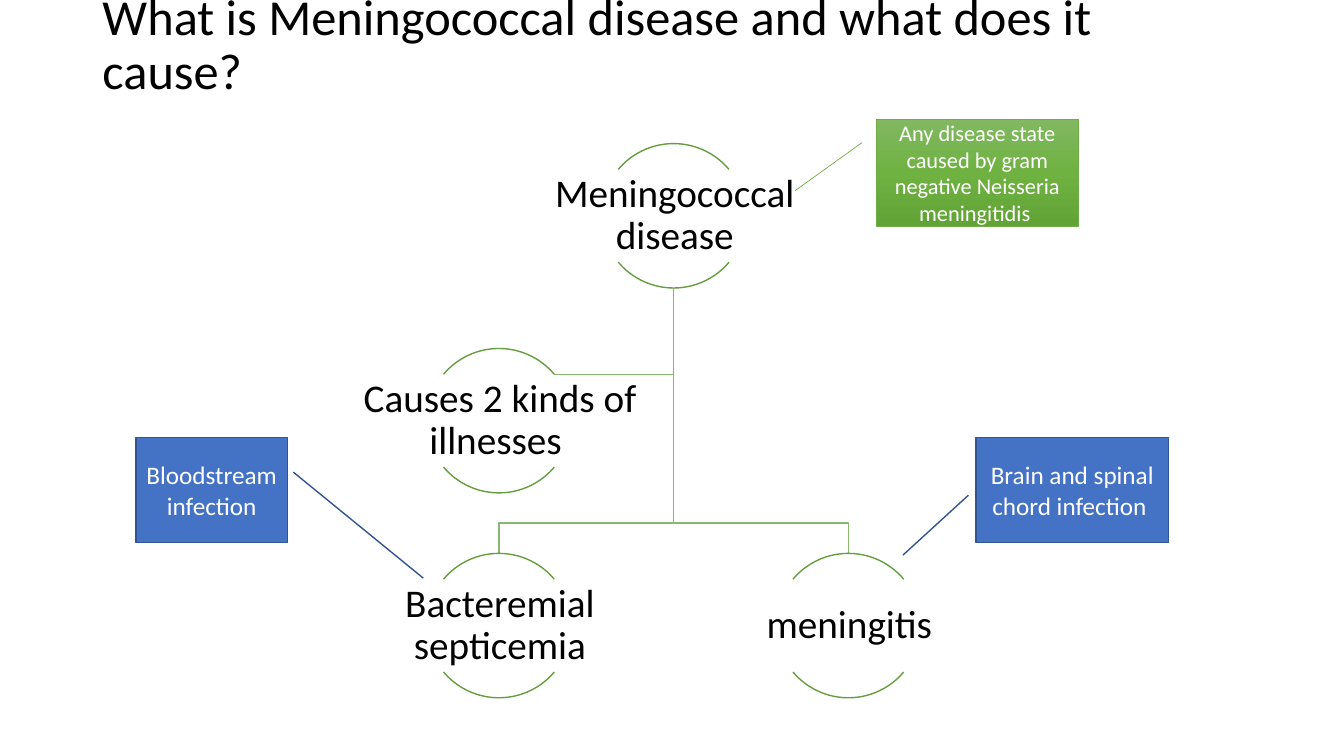
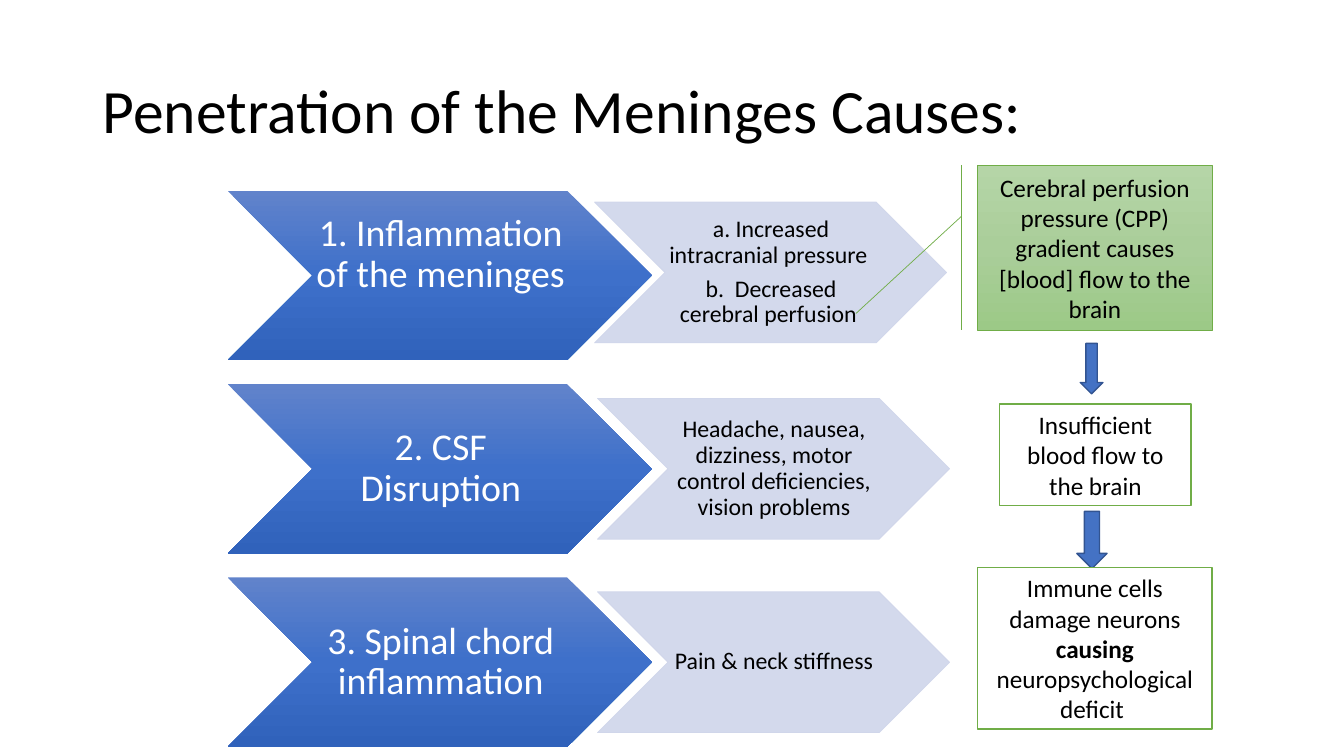
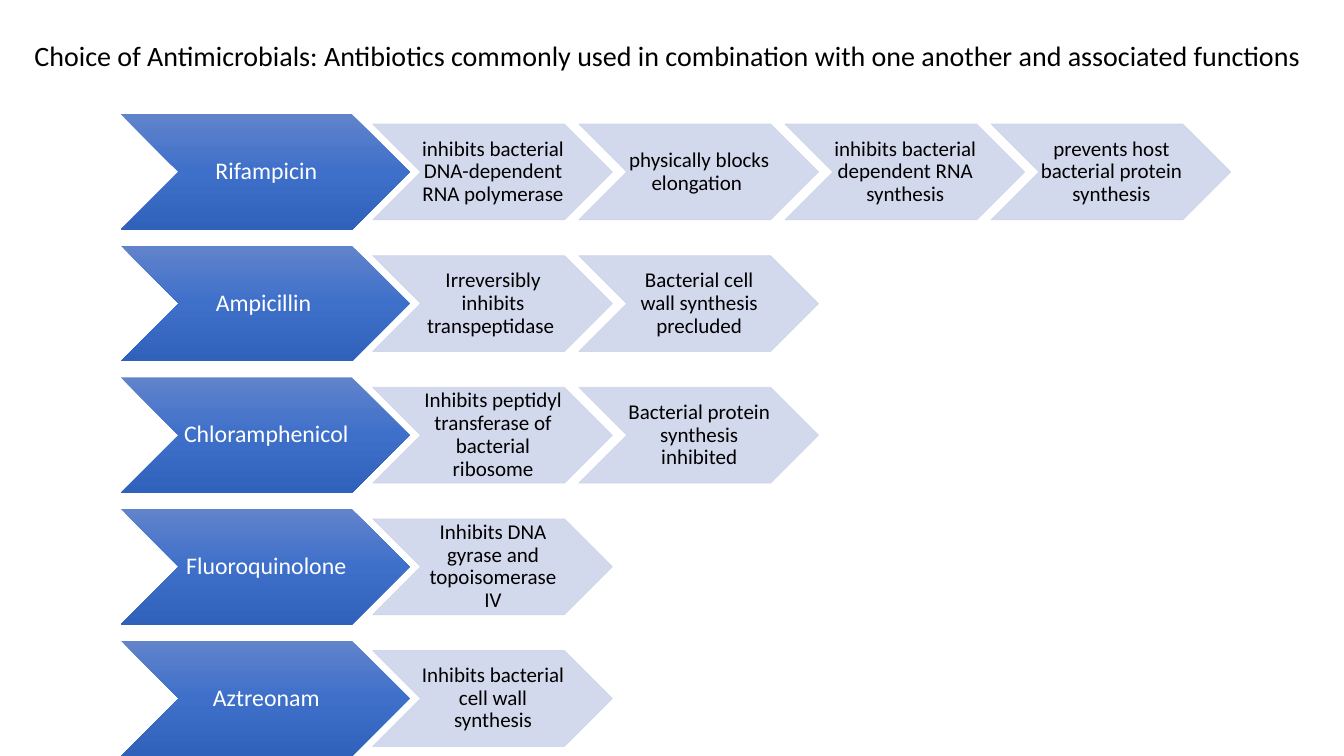
"""Build three slides on meningococcal disease: causes, effects and antimicrobials."""
from copy import deepcopy

from lxml.etree import SubElement
from pptx import Presentation
from pptx.dml.color import RGBColor
from pptx.enum.shapes import MSO_SHAPE
from pptx.enum.text import MSO_ANCHOR, MSO_AUTO_SIZE, PP_ALIGN
from pptx.oxml.ns import qn
from pptx.util import Inches, Pt

FONT = "Calibri"
COLOURS = {
    "black": "000000", "white": "FFFFFF", "blue": "4472C4", "navy": "325491",
    "green": "70AD47", "arc": "669D40", "branch": "88B76F", "pale": "CFD5EA",
}
GRADIENTS = {
    "blue fade": ("6183CB", "3E70CA", "3062BB"),
    "green fade": ("81B861", "6FB242", "62A336"),
    "light green fade": ("B5D5A7", "AACE9A", "9CC987"),
}

deck = Presentation()
deck.slide_width, deck.slide_height = Inches(13.33), Inches(7.5)
CELL = deck.slide_width / 160


def paint(shape, fill=None, line=None, width=1, adjustments=()):
    """Set the fill, outline and adjustments of a shape."""
    shape.shadow.inherit = False
    for index, value in enumerate(adjustments):
        shape.adjustments[index] = value
    if fill in GRADIENTS:
        shape.fill.gradient()
        shape.fill.gradient_angle = 270
        stop_list = shape._element.spPr.find(qn("a:gradFill")).find(qn("a:gsLst"))
        stop_list.insert(1, deepcopy(stop_list[0]))
        for index, stop in enumerate(shape.fill.gradient_stops):
            stop.position = index / 2
            stop.color.rgb = RGBColor.from_string(GRADIENTS[fill][index])
    elif fill:
        shape.fill.solid()
        shape.fill.fore_color.rgb = RGBColor.from_string(COLOURS[fill])
    else:
        shape.fill.background()
    if line:
        shape.line.color.rgb = RGBColor.from_string(COLOURS[line])
        shape.line.width = Pt(width)
    else:
        shape.line.fill.background()
    if fill == "pale":
        for colour in shape._element.spPr.iter(qn("a:srgbClr")):
            SubElement(colour, qn("a:alpha"), val="90000")


def write(shape, text, size, colour="black", inset=None, align=PP_ALIGN.CENTER, spacing=0.9, after=0.35):
    """Fill a shape with paragraphs, one per line, with **bold** spans."""
    frame = shape.text_frame
    frame.word_wrap = True
    frame.auto_size = MSO_AUTO_SIZE.NONE
    frame.vertical_anchor = MSO_ANCHOR.MIDDLE
    if inset is not None:
        frame.margin_left = frame.margin_top = frame.margin_bottom = Inches(inset)
        frame.margin_right = 0
    frame.text = text
    for para in frame.paragraphs:
        parts = para.text.split("**")
        para.text = parts[0]
        for part in parts[1:]:
            para.add_run().text = part
        para.alignment, para.line_spacing = align, spacing
        para.space_before, para.space_after = 0, Pt(after * size)
        for index, span in enumerate(para.runs):
            span.font.name, span.font.size = FONT, Pt(size)
            span.font.bold = index % 2 == 1
            span.font.color.rgb = RGBColor.from_string(COLOURS[colour])


titles = [
    ("What is Meningococcal disease and what does it cause?", 36, (11, -3.2, 138, 17.4)),
    ("Penetration of the Meninges Causes:", 44, (11, 4.8, 138, 17.4)),
    ("Choice of Antimicrobials: Antibiotics commonly used in combination with one another "
     "and associated functions", 20, (2.9, 0, 161.8, 13.6)),
]
pages = []
for text, size, area in titles:
    page = deck.slides.add_slide(deck.slide_layouts[5])
    title = page.shapes.title
    title.left, title.top, title.width, title.height = [round(CELL * n) for n in area]
    write(title, text, size, align=PP_ALIGN.LEFT, after=0)
    pages.append(page)
disease_page, effects_page, drugs_page = pages

diameter, middle, side, first_row, level = 17.2, 80.2, 20.8, 17.1, 24.4
root_bottom = first_row + diameter
leaf_top = first_row + 2 * level
fork = leaf_top - 3.6
assistant_row = first_row + level + 3.1
branches = [
    [(middle, root_bottom), (middle, assistant_row), (middle - side + 6.6, assistant_row)],
    [(middle, root_bottom), (middle, fork), (middle + side, fork), (middle + side, leaf_top)],
    [(middle, root_bottom), (middle, fork), (middle - side, fork), (middle - side, leaf_top)],
]
for branch in branches:
    points = [(round(CELL * x), round(CELL * y)) for x, y in branch]
    outline = disease_page.shapes.build_freeform(*points[0])
    outline.add_line_segments(points[1:], close=False)
    paint(outline.convert_to_shape(), line="branch")

nodes = [
    ("Meningococcal disease", 0, 0),
    ("Bacteremial septicemia", -1, 2),
    ("meningitis", 1, 2),
    ("Causes 2 kinds of illnesses ", -1, 1),
]
for text, column, row in nodes:
    centre, top = middle + column * side, first_row + row * level
    circle = [round(CELL * n) for n in (centre - diameter / 2, top, diameter, diameter)]
    for angles in ((132, 192), (24, 84)):
        paint(disease_page.shapes.add_shape(MSO_SHAPE.ARC, *circle), line="arc", adjustments=angles)
    area = (centre - diameter, top + 3.1, 2 * diameter, 11)
    label = disease_page.shapes.add_textbox(*[round(CELL * n) for n in area])
    write(label, text, 28, inset=0.02)

flows = [
    (effects_page, 27.1, 22.7, 20.2, 27, 17, [
        ("1. Inflammation of the meninges \t",
         ["a. Increased intracranial pressure \nb.  Decreased cerebral perfusion "], 0.35),
        ("2. CSF Disruption",
         ["Headache, nausea, dizziness, motor control deficiencies, vision problems"], 0),
        ("3. Spinal chord inflammation", ["Pain & neck stiffness"], 0),
    ]),
    (drugs_page, 14.4, 13.6, 13.75, 17, 15, [
        ("Rifampicin",
         ["inhibits bacterial DNA-dependent RNA polymerase", "physically blocks elongation ",
          "inhibits bacterial dependent RNA synthesis",
          "prevents host bacterial protein synthesis"], 0),
        ("Ampicillin ",
         ["Irreversibly inhibits transpeptidase ", "Bacterial cell wall synthesis precluded"], 0),
        ("Chloramphenicol",
         ["Inhibits peptidyl transferase of bacterial ribosome",
          "Bacterial protein synthesis inhibited"], 0),
        ("Fluoroquinolone", ["Inhibits DNA gyrase and topoisomerase IV"], 0),
        ("Aztreonam", ["Inhibits bacterial cell wall synthesis"], 0),
    ]),
]
for page, left, top, height, head_size, step_size, rows in flows:
    step_height = 0.83 * height
    for row, (head, steps, nudge) in enumerate(rows):
        row_top = top + 1.14 * height * row
        area = (left, row_top, 2.5 * height, height)
        chevron = page.shapes.add_shape(MSO_SHAPE.CHEVRON, *[round(CELL * n) for n in area])
        paint(chevron, "blue fade")
        write(chevron, head, head_size, "white", 0.02)
        for column, step in enumerate(steps):
            step_left = left + 2.18 * height + 0.86 * 2.5 * step_height * column - nudge
            step_top = row_top + (height - step_height) / 2 - nudge
            area = (step_left, step_top, 2.5 * step_height, step_height)
            chevron = page.shapes.add_shape(MSO_SHAPE.CHEVRON, *[round(CELL * n) for n in area])
            paint(chevron, "pale", "pale", 0.5)
            write(chevron, step, step_size, inset=0.01)

callout, barred_callout = MSO_SHAPE.LINE_CALLOUT_1, MSO_SHAPE.LINE_CALLOUT_1_BORDER_AND_ACCENT_BAR
boxes = [
    (disease_page, callout, (104.3, 14.2, 24.1, 12.7), "green fade", "green", 0.5,
     (0.22, -0.07, 0.67, -0.4),
     "Any disease state caused by gram negative Neisseria meningitidis ", 16, "white"),
    (disease_page, callout, (116.2, 52.1, 22.9, 12.5), "blue", "navy", 1,
     (0.55, -0.04, 1.12, -0.38), "Brain and spinal chord infection ", 18, "white"),
    (disease_page, callout, (16.2, 52.1, 18, 12.5), "blue", "navy", 1,
     (0.33, 1.04, 1.34, 1.9), "Bloodstream infection", 18, "white"),
    (effects_page, barred_callout, (116.4, 19.7, 27.9, 19.6), "light green fade", "green", 0.5,
     (0.31, -0.07, 0.9, -0.52),
     "Cerebral perfusion pressure (CPP) gradient causes [blood] flow to the brain", 18, "black"),
    (effects_page, MSO_SHAPE.DOWN_ARROW, (128.6, 40.9, 2.7, 6), "blue", "navy", 1,
     (), "", 18, "white"),
    (effects_page, MSO_SHAPE.RECTANGLE, (119, 48.1, 22.8, 12.1), "white", "green", 1,
     (), "Insufficient blood flow to the brain", 18, "black"),
    (effects_page, MSO_SHAPE.DOWN_ARROW, (128.2, 60.9, 3.6, 6.8), "blue", "navy", 1,
     (), "", 18, "white"),
    (effects_page, MSO_SHAPE.RECTANGLE, (116.4, 67.6, 27.9, 19.2), "white", "green", 1,
     (), "Immune cells damage neurons **causing** neuropsychological deficit ", 18, "black"),
]
for page, preset, area, fill, line, width, adjustments, text, size, colour in boxes:
    box = page.shapes.add_shape(preset, *[round(CELL * n) for n in area])
    paint(box, fill, line, width, adjustments)
    if text:
        write(box, text, size, colour, spacing=1.0, after=0)

deck.save("out.pptx")
